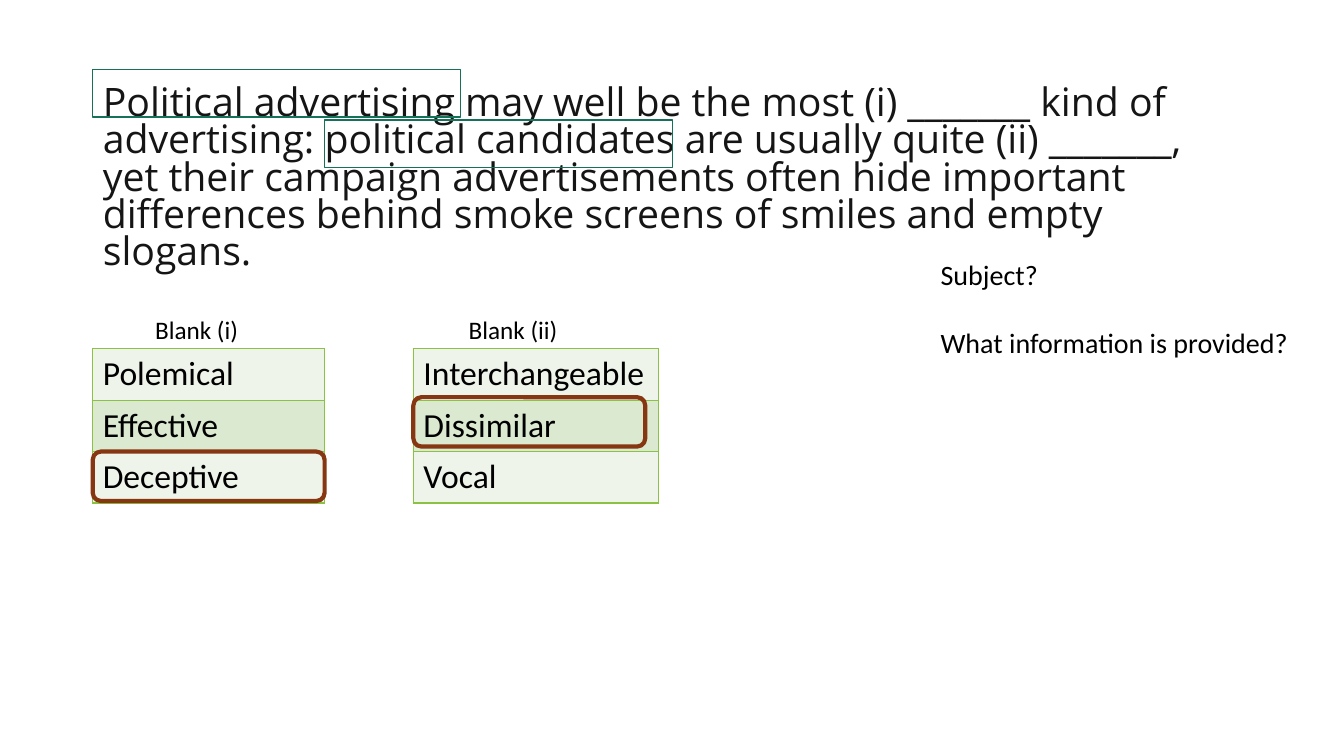
"""Build a sentence-completion slide with two blanks and their answer choices."""
from lxml.etree import SubElement
from pptx import Presentation
from pptx.dml.color import RGBColor
from pptx.enum.shapes import MSO_SHAPE
from pptx.enum.text import MSO_ANCHOR, MSO_AUTO_SIZE, PP_ALIGN
from pptx.oxml.ns import qn
from pptx.util import Inches, Pt

BLACK = RGBColor(0x00, 0x00, 0x00)
INK = RGBColor(0x15, 0x15, 0x15)
PALE = RGBColor(0xEE, 0xF4, 0xE9)
LIGHT = RGBColor(0xDA, 0xE9, 0xCF)
LIME = RGBColor(0x8B, 0xC1, 0x45)
GREEN = RGBColor(0x15, 0x72, 0x59)
RUST = RGBColor(0x87, 0x36, 0x12)
ROW_H = 0.51


def add_run(p, text, size, font="Calibri", color=BLACK):
    r = p.add_run()
    r.text = text
    r.font.size = Pt(size)
    r.font.name = font
    r.font.color.rgb = color


def add_text_box(s, left, top, width, height):
    tf = s.shapes.add_textbox(Inches(left), Inches(top), Inches(width), Inches(height)).text_frame
    tf.word_wrap = True
    return tf


prs = Presentation()
prs.slide_width = Inches(13.33)
prs.slide_height = Inches(7.5)
s = prs.slides.add_slide(prs.slide_layouts[5])

choices = [
    ("Blank (i)", 1.44, 0.92, 2.3, ["Polemical", "Effective", "Deceptive"]),
    ("Blank (ii)", 4.55, 4.1, 2.43, ["Interchangeable", "Dissimilar", "Vocal"]),
]
for label, label_left, left, width, words in choices:
    tf = add_text_box(s, label_left, 3.07, 1.2, 0.4)
    add_run(tf.paragraphs[0], label, 18)

    table = s.shapes.add_table(len(words), 1, Inches(left), Inches(3.46),
                               Inches(width), Inches(ROW_H * len(words))).table
    table.first_row = False
    for i, word in enumerate(words):
        cell = table.cell(i, 0)
        add_run(cell.text_frame.paragraphs[0], word, 24)
        tcPr = cell._tc.get_or_add_tcPr()
        for side in ("a:lnL", "a:lnR", "a:lnT", "a:lnB"):
            ln = SubElement(tcPr, qn(side), w=str(Pt(1)))
            fill = SubElement(ln, qn("a:solidFill"))
            SubElement(fill, qn("a:srgbClr"), val=str(LIME))
        cell.fill.solid()
        cell.fill.fore_color.rgb = LIGHT if i % 2 else PALE

title = s.shapes.title
title.left, title.top = Inches(0.92), Inches(1.06)
title.width, title.height = Inches(11.5), Inches(1.45)
tf = title.text_frame
tf.word_wrap = True
tf.auto_size = MSO_AUTO_SIZE.NONE
tf.vertical_anchor = MSO_ANCHOR.MIDDLE
p = tf.paragraphs[0]
p.alignment = PP_ALIGN.LEFT
p.line_spacing = 0.79
add_run(p, "Political advertising may well be the most (i) _______ kind of advertising: "
           "political candidates are usually quite (ii) _______, yet their campaign "
           "advertisements often hide important differences behind smoke screens of "
           "smiles and empty slogans.", 28, "Open Sans", INK)

tf = add_text_box(s, 9.23, 2.51, 3.82, 1.11)
add_run(tf.paragraphs[0], "Subject?", 20)
p = tf.add_paragraph()
p.space_before = Pt(24)
add_run(p, "What information is provided?", 20)

marks = [
    (MSO_SHAPE.RECTANGLE, 0.92, 0.69, 3.65, 0.47, GREEN, 1),
    (MSO_SHAPE.ROUNDED_RECTANGLE, 0.92, 4.48, 2.3, 0.49, RUST, 3),
    (MSO_SHAPE.RECTANGLE, 3.22, 1.19, 3.45, 0.47, GREEN, 1),
    (MSO_SHAPE.ROUNDED_RECTANGLE, 4.1, 3.94, 2.3, 0.49, RUST, 3),
]
for kind, left, top, width, height, color, weight in marks:
    sp = s.shapes.add_shape(kind, Inches(left), Inches(top), Inches(width), Inches(height))
    sp.shadow.inherit = False
    sp.fill.background()
    sp.line.color.rgb = color
    sp.line.width = Pt(weight)

prs.save("out.pptx")
